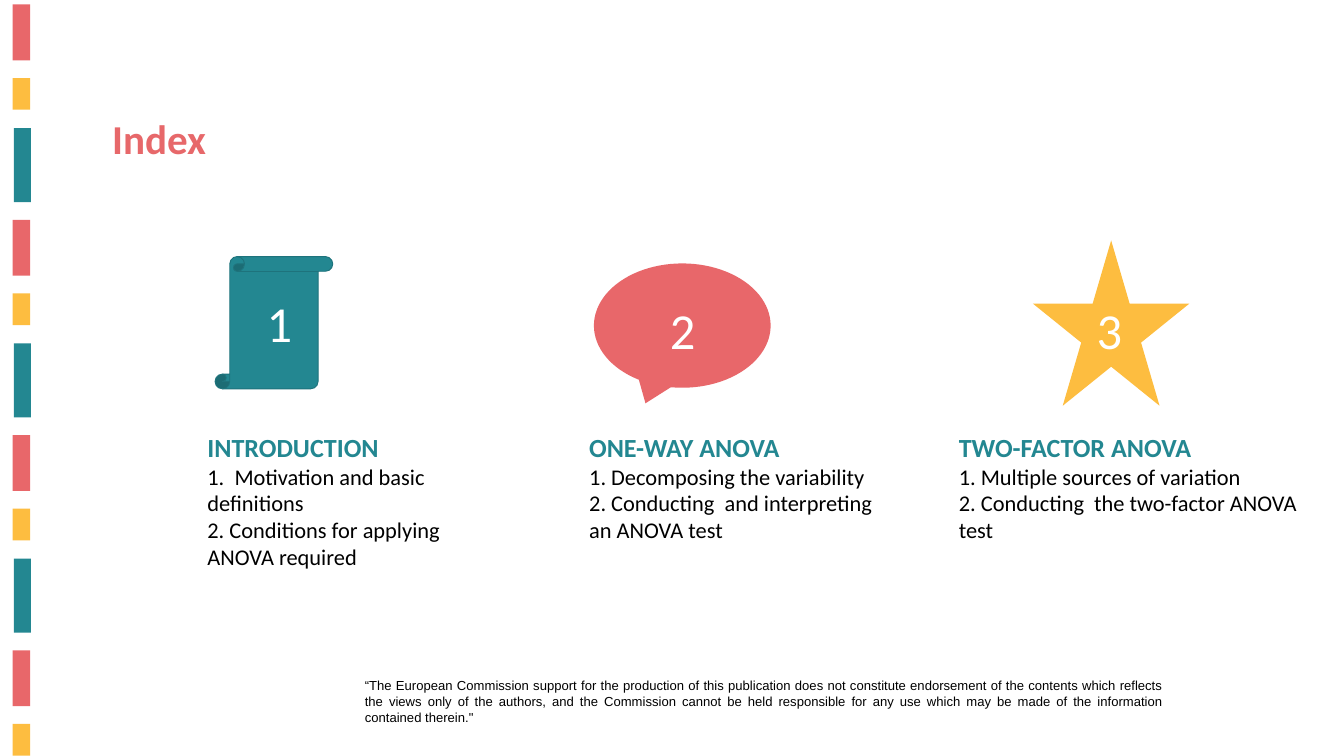
from typing import NamedTuple, Optional

from pptx import Presentation
from pptx.dml.color import RGBColor
from pptx.enum import shapes, text
from pptx.util import Cm, Pt

CORAL, YELLOW, TEAL = "E8676A", "FDBD40", "238791"
BLACK, WHITE = "000000", "FFFFFF"
STRIPE_PERIOD = 8.14


class Box(NamedTuple):
    """Left, top, width and height in centimetres."""
    left: float
    top: float
    width: float
    height: float


class Line(NamedTuple):
    wording: str
    size: int
    color: str
    bold: bool = False
    font: str = "Calibri"


class Section(NamedTuple):
    number: str
    icon: shapes.MSO_SHAPE
    icon_box: Box
    color: str
    outline: Optional[str]
    number_box: Box
    heading: str
    topics: list[str]
    text_box: Box


STRIPES = [
    (Box(0.48, 0.17, 0.66, 2.11), CORAL),
    (Box(0.48, 2.95, 0.66, 1.2), YELLOW),
    (Box(0.53, 4.84, 0.64, 2.8), TEAL),
]

SECTIONS = [
    Section("1", shapes.MSO_SHAPE.VERTICAL_SCROLL, Box(8.13, 9.7, 4.45, 5), TEAL, "1E737C",
            Box(9.83, 10.92, 4.01, 2.57), "INTRODUCTION",
            ["1.  Motivation and basic definitions",
             "2. Conditions for applying ANOVA required"],
            Box(7.59, 16.18, 11.56, 7.34)),
    Section("2", shapes.MSO_SHAPE.OVAL_CALLOUT, Box(22.45, 9.96, 6.68, 4.7), CORAL, None,
            Box(25.07, 11.2, 2.74, 2.57), "ONE-WAY ANOVA",
            ["1. Decomposing the variability",
             "2. Conducting  and interpreting an ANOVA test"],
            Box(22.02, 16.18, 11.56, 6.32)),
    Section("3", shapes.MSO_SHAPE.STAR_5_POINT, Box(39.04, 9.09, 5.92, 6.25), YELLOW, None,
            Box(41.2, 11.2, 3.81, 2.57), "TWO-FACTOR ANOVA",
            ["1. Multiple sources of variation",
             "2. Conducting  the two-factor ANOVA test"],
            Box(35.99, 16.18, 13.72, 5.13)),
]

DISCLAIMER = (
    "“The European Commission support for the production of this publication does not "
    "constitute endorsement of the contents which reflects the views only of the authors, "
    "and the Commission cannot be held responsible for any use which may be made of the "
    "information contained therein.\""
)


def rgb(color: str) -> RGBColor:
    return RGBColor.from_string(color)


def add_filled(slide, kind: shapes.MSO_SHAPE, box: Box, color: str,
               outline: Optional[str] = None) -> None:
    shape = slide.shapes.add_shape(kind, *map(Cm, box))
    shape.shadow.inherit = False
    shape.fill.solid()
    shape.fill.fore_color.rgb = rgb(color)
    if outline:
        shape.line.color.rgb = rgb(outline)
        shape.line.width = Pt(1)
    else:
        shape.line.fill.background()


def add_text(slide, box: Box, lines: list[Line],
             align: text.PP_ALIGN = text.PP_ALIGN.LEFT) -> None:
    frame = slide.shapes.add_textbox(*map(Cm, box)).text_frame
    frame.word_wrap = True
    frame.text = "\n".join(line.wording for line in lines)
    for paragraph, line in zip(frame.paragraphs, lines):
        paragraph.alignment = align
        for run in paragraph.runs:
            run.font.name = line.font
            run.font.size = Pt(line.size)
            run.font.bold = line.bold
            run.font.color.rgb = rgb(line.color)


def add_section(slide, section: Section) -> None:
    add_filled(slide, section.icon, section.icon_box, section.color, section.outline)
    add_text(slide, section.number_box, [Line(section.number, 54, WHITE)])
    topics = [Line(topic, 24, BLACK) for topic in section.topics]
    add_text(slide, section.text_box, [Line(section.heading, 28, TEAL, bold=True), *topics])


def add_stripes(slide, count: int) -> None:
    for index in range(count):
        cycle, position = divmod(index, len(STRIPES))
        box, color = STRIPES[position]
        moved = box._replace(top=box.top + cycle * STRIPE_PERIOD)
        add_filled(slide, shapes.MSO_SHAPE.RECTANGLE, moved, color)


def main() -> None:
    presentation = Presentation()
    presentation.slide_width = Cm(50.8)
    presentation.slide_height = Cm(28.58)
    slide = presentation.slides.add_slide(presentation.slide_layouts[6])

    add_stripes(slide, 11)
    add_text(slide, Box(13.54, 25.5, 30.68, 2.06),
             [Line(DISCLAIMER, 14, BLACK, font="Arial")], text.PP_ALIGN.JUSTIFY)
    add_text(slide, Box(3.99, 4.17, 17.2, 4.01), [Line("Index", 44, "E7686A", bold=True)])
    for section in SECTIONS:
        add_section(slide, section)

    presentation.save("out.pptx")


if __name__ == "__main__":
    main()
